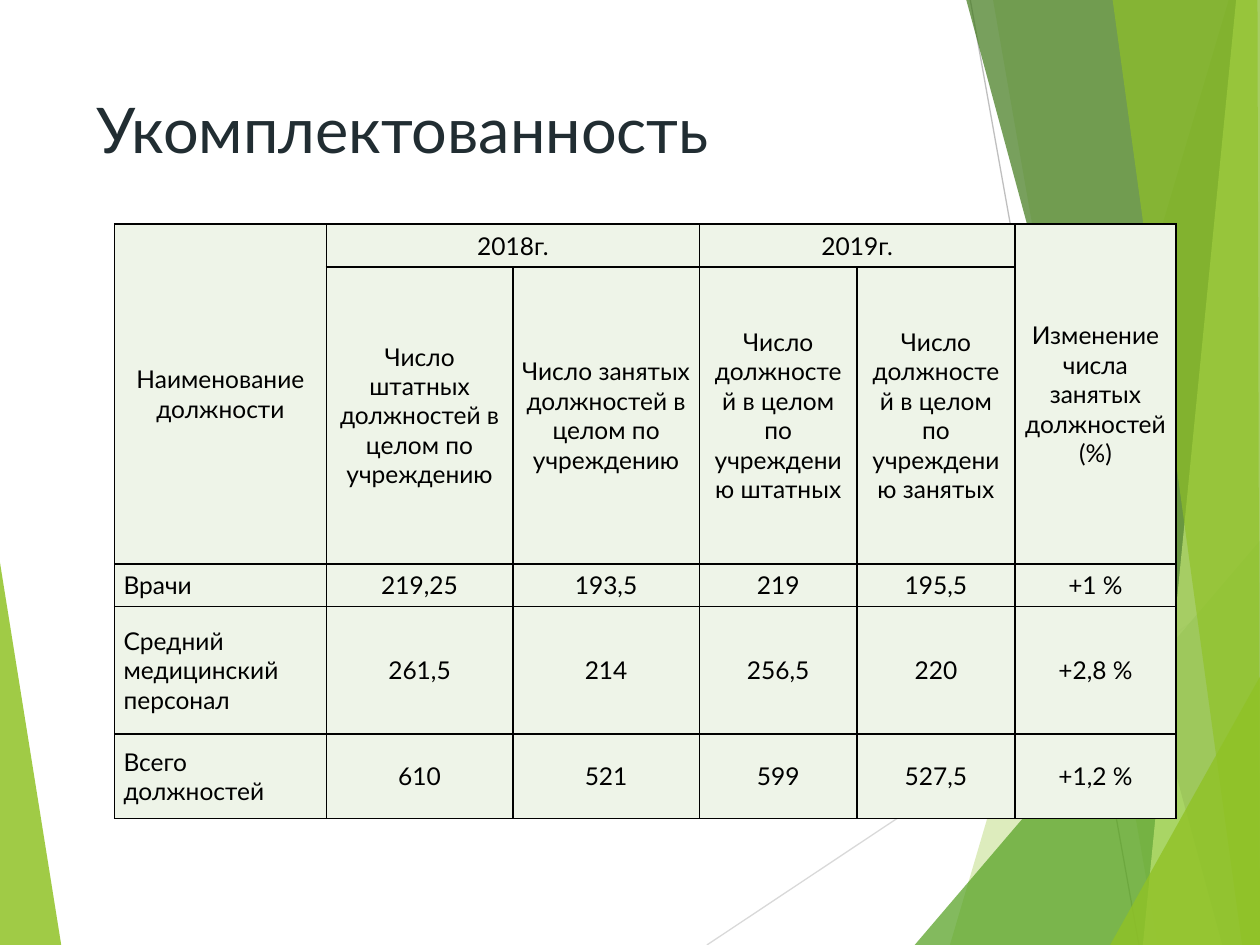
from lxml.etree import SubElement
from pptx import Presentation
from pptx.dml.color import RGBColor
from pptx.enum.shapes import MSO_CONNECTOR
from pptx.enum.text import MSO_ANCHOR, PP_ALIGN
from pptx.oxml import parse_xml
from pptx.oxml.ns import nsdecls, qn
from pptx.util import Cm, Pt

FONT = "Lato"
COLORS = {
    "title": "212D32",
    "text": "000000",
    "border": "000000",
    "cell": "EEF4E8",
    "green": "90C226",
    "leaf": "54A021",
    "forest": "3F7819",
    "lime": "C0E474",
    "rising line": "D9D9D9",
    "falling line": "BFBFBF",
}

# Slide edges in centimetres; the decoration bleeds slightly past the right one
BOTTOM = 19.05
RIGHT = 25.43

LEFT_WEDGE = ("green", 85, [(-0.03, 11.15), (1.24, 19.08), (-0.03, BOTTOM)])
RIGHT_FACETS = [  # colour, opacity in percent, corners
    ("green", 30, [(24.77, 0), (19.15, BOTTOM), (RIGHT, BOTTOM), (RIGHT, 0)]),
    ("green", 20, [(20.02, 0), (23.34, BOTTOM), (RIGHT, BOTTOM), (RIGHT, 0)]),
    ("leaf", 72, [(18.44, BOTTOM), (25.4, 10.9), (RIGHT, BOTTOM)]),
    ("forest", 70, [(19.48, 0), (24.64, BOTTOM), (RIGHT, BOTTOM), (RIGHT, 0)]),
    ("lime", 70, [(24.92, 0), (23.04, BOTTOM), (RIGHT, BOTTOM), (RIGHT, 0)]),
    ("green", 65, [(22.43, 0), (25.04, BOTTOM), (25.4, BOTTOM), (25.35, 0)]),
    ("green", 80, [(22.38, BOTTOM), (RIGHT, 13.59), (RIGHT, BOTTOM)]),
]

COLUMN_WIDTHS = [4.27, 3.76, 3.76, 3.18, 3.18, 3.25]
ROW_HEIGHTS = [0.86, 5.99, 0.86, 2.57, 1.7]
MERGES = [((0, 0), (1, 0)), ((0, 1), (0, 2)), ((0, 3), (0, 4)), ((0, 5), (1, 5))]
STAFFING = [
    ["Наименование должности", "2018г.", "", "2019г.", "",
     "Изменение числа занятых должностей\n(%)"],
    ["", "Число штатных должностей в целом по учреждению",
     "Число занятых должностей в целом по учреждению",
     "Число должностей в целом по учреждению штатных",
     "Число должностей в целом по учреждению занятых", ""],
    ["Врачи", "219,25", "193,5", "219", "195,5", "+1 %"],
    ["Средний медицинский персонал", "261,5", "214", "256,5", "220", "+2,8 %"],
    ["Всего должностей", "610", "521", "599", "527,5", "+1,2 %"],
]


def color(name):
    return RGBColor.from_string(COLORS[name])


def format_text(text_frame, size, color_name, alignment):
    for paragraph in text_frame.paragraphs:
        paragraph.alignment = alignment
        for run in paragraph.runs:
            run.font.name = FONT
            run.font.size = Pt(size)
            run.font.color.rgb = color(color_name)


def add_facet(slide, color_name, opacity, corners):
    points = [(Cm(x), Cm(y)) for x, y in corners]
    builder = slide.shapes.build_freeform(*points[0], scale=1.0)
    builder.add_line_segments(points[1:], close=True)
    shape = builder.convert_to_shape()
    shape.shadow.inherit = False
    shape.line.fill.background()
    shape.fill.solid()
    shape.fill.fore_color.rgb = color(color_name)
    fill_color = shape.fill._xPr.find(".//" + qn("a:srgbClr"))
    SubElement(fill_color, qn("a:alpha"), val=str(opacity * 1000))


def add_thin_line(slide, color_name, start, end):
    connector = slide.shapes.add_connector(
        MSO_CONNECTOR.STRAIGHT, *(Cm(value) for value in start + end))
    connector.line.color.rgb = color(color_name)
    connector.line.width = Pt(0.75)
    SubElement(connector._element.spPr, qn("a:effectLst"))


def add_title(slide, text):
    box = slide.shapes.add_textbox(Cm(1.7), Cm(1.7), Cm(17.63), Cm(3.66))
    text_frame = box.text_frame
    text_frame.word_wrap = True
    text_frame.vertical_anchor = MSO_ANCHOR.TOP
    text_frame.text = text
    format_text(text_frame, 36, "title", PP_ALIGN.LEFT)


def add_borders(cell):
    properties = cell._tc.get_or_add_tcPr()
    for index, side in enumerate(("lnL", "lnR", "lnT", "lnB")):
        properties.insert(index, parse_xml(
            f'<a:{side} {nsdecls("a")} w="{Pt(1)}"><a:solidFill>'
            f'<a:srgbClr val="{COLORS["border"]}"/></a:solidFill></a:{side}>'))


def format_cell(cell, alignment):
    cell.fill.solid()
    cell.fill.fore_color.rgb = color("cell")
    cell.vertical_anchor = MSO_ANCHOR.MIDDLE
    cell.margin_left = cell.margin_right = Cm(0.18)
    cell.margin_top = cell.margin_bottom = 0
    format_text(cell.text_frame, 14, "text", alignment)
    add_borders(cell)


def add_staffing_table(slide):
    table = slide.shapes.add_table(
        len(ROW_HEIGHTS), len(COLUMN_WIDTHS), Cm(2.31), Cm(4.52),
        Cm(sum(COLUMN_WIDTHS)), Cm(sum(ROW_HEIGHTS))).table
    for column, width in zip(table.columns, COLUMN_WIDTHS):
        column.width = Cm(width)
    for row, height in zip(table.rows, ROW_HEIGHTS):
        row.height = Cm(height)
    for first, last in MERGES:
        table.cell(*first).merge(table.cell(*last))
    for row_index, texts in enumerate(STAFFING):
        for column_index, text in enumerate(texts):
            cell = table.cell(row_index, column_index)
            if text:
                cell.text_frame.text = text
            is_job_name = row_index > 1 and column_index == 0
            format_cell(cell, PP_ALIGN.JUSTIFY if is_job_name else PP_ALIGN.CENTER)


def main():
    presentation = Presentation()
    presentation.slide_width = Cm(25.4)
    presentation.slide_height = Cm(BOTTOM)
    slide = presentation.slides.add_slide(presentation.slide_layouts[6])

    # Background decoration
    add_facet(slide, *LEFT_WEDGE)
    add_thin_line(slide, "rising line", (14.25, BOTTOM), (RIGHT, 11.61))
    add_thin_line(slide, "falling line", (19.56, 0), (22.96, BOTTOM))
    for facet in RIGHT_FACETS:
        add_facet(slide, *facet)

    # Content
    add_title(slide, "Укомплектованность")
    add_staffing_table(slide)

    presentation.save("out.pptx")


if __name__ == "__main__":
    main()
